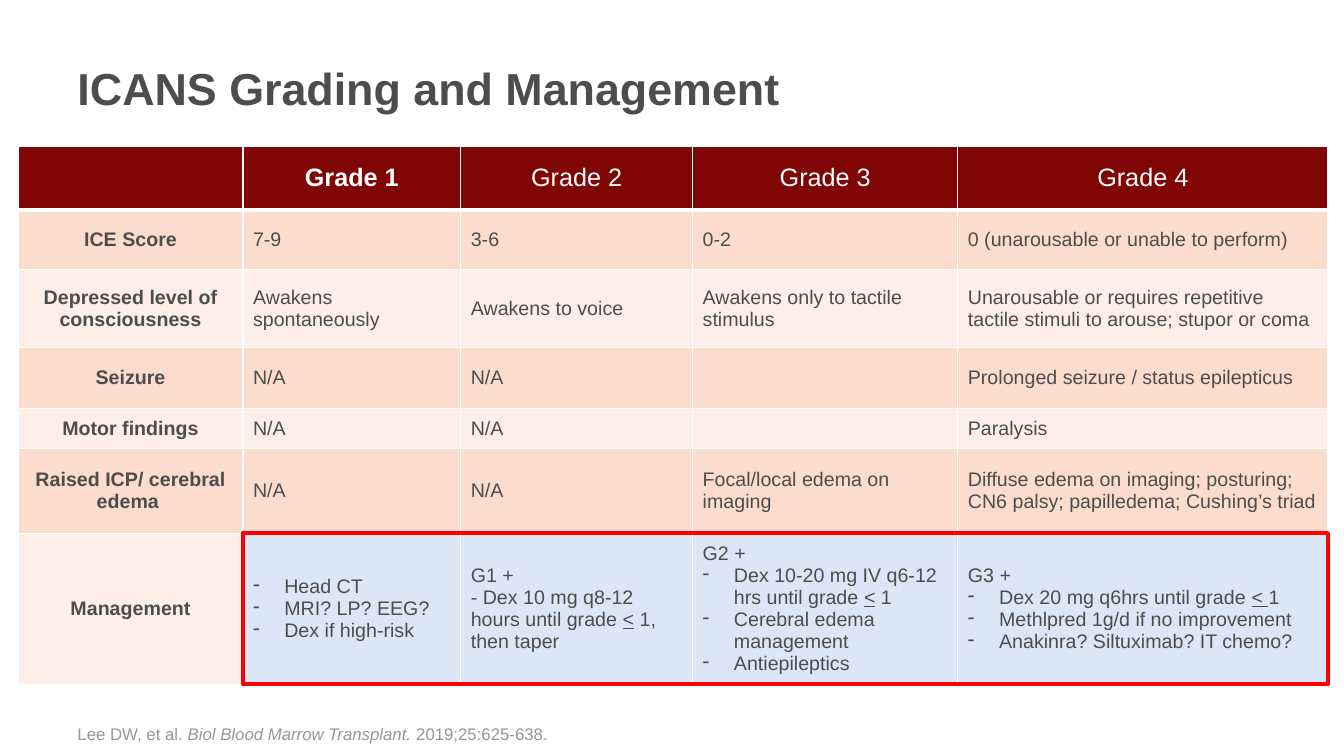
from lxml.etree import SubElement
from pptx import Presentation
from pptx.dml.color import RGBColor
from pptx.enum.shapes import MSO_SHAPE as Shape
from pptx.enum.text import MSO_ANCHOR as Anchor, PP_ALIGN as Align
from pptx.oxml.ns import qn
from pptx.util import Inches, Pt

MAROON = RGBColor(0x80, 0x06, 0x06)
PEACH = RGBColor(0xFC, 0xDC, 0xCD)
PALE_PEACH = RGBColor(0xFD, 0xEE, 0xE8)
PALE_BLUE = RGBColor(0xDB, 0xE7, 0xF7)
WHITE = RGBColor(0xFF, 0xFF, 0xFF)
RED = RGBColor(0xFF, 0x00, 0x00)
DARK_GRAY = RGBColor(0x4D, 0x4D, 0x4D)
LIGHT_GRAY = RGBColor(0x97, 0x97, 0x97)

LEFT, TOP = 0.18, 1.45
COLUMNS = [2.23, 2.16, 2.3, 2.63, 3.67]
ROWS = [0.63, 0.59, 0.78, 0.6, 0.4, 0.84, 1.46]
MARGIN, TEXT_WIDTH = 0.67, 11.75
BULLET, UNDERLINE = "*", "_"

GRADING = [
    ["", "Grade 1", "Grade 2", "Grade 3", "Grade 4"],
    ["ICE Score", "7-9", "3-6", "0-2", "0 (unarousable or unable to perform)"],
    ["Depressed level of consciousness", "Awakens spontaneously", "Awakens to voice",
     "Awakens only to tactile stimulus",
     "Unarousable or requires repetitive tactile stimuli to arouse; stupor or coma"],
    ["Seizure", "N/A", "N/A", "", "Prolonged seizure / status epilepticus"],
    ["Motor findings", "N/A", "N/A", "", "Paralysis"],
    ["Raised ICP/ cerebral edema ", "N/A", "N/A", "Focal/local edema on imaging",
     "Diffuse edema on imaging; posturing; CN6 palsy; papilledema; Cushing’s triad"],
    ["Management",
     "*Head CT\n*MRI? LP? EEG?\n*Dex if high-risk",
     "G1 +\n- Dex 10 mg q8-12 hours until grade _<_ 1, then taper",
     "G2 +\n*Dex 10-20 mg IV q6-12 hrs until grade _<_ 1\n"
     "*Cerebral edema management\n*Antiepileptics",
     "G3 +\n*Dex 20 mg q6hrs until grade _< _1\n"
     "*Methlpred 1g/d if no improvement\n*Anakinra? Siltuximab? IT chemo?"],
]


def style(font, size, color, bold=False):
    font.name = "Arial"
    font.size = Pt(size)
    font.color.rgb = color
    font.bold = bold


def add_border(cell, side, width):
    line = SubElement(cell._tc.get_or_add_tcPr(), qn(f"a:ln{side}"), w=str(Pt(width)))
    fill = SubElement(line, qn("a:solidFill"))
    SubElement(fill, qn("a:srgbClr"), val=str(WHITE))


deck = Presentation()
deck.slide_width, deck.slide_height = Inches(13.33), Inches(7.5)
page = deck.slides.add_slide(deck.slide_layouts[6])

title = page.shapes.add_textbox(Inches(MARGIN), Inches(0.22), Inches(TEXT_WIDTH), Inches(1.3))
title.text_frame.word_wrap = True
title.text_frame.vertical_anchor = Anchor.MIDDLE
title.text_frame.text = "ICANS Grading and Management"
style(title.text_frame.paragraphs[0].runs[0].font, 32, DARK_GRAY, True)

citation = page.shapes.add_textbox(Inches(MARGIN), Inches(6.95), Inches(TEXT_WIDTH), Inches(0.48))
citation.text_frame.word_wrap = True
citation.text_frame.vertical_anchor = Anchor.BOTTOM
for text in ["Lee DW, et al. ", "Biol Blood Marrow Transplant. ", "2019;25:625-638."]:
    span = citation.text_frame.paragraphs[0].add_run()
    span.text = text
    style(span.font, 12, LIGHT_GRAY)
    span.font.italic = text.startswith("Biol")

table = page.shapes.add_table(len(ROWS), len(COLUMNS), Inches(LEFT), Inches(TOP),
                              Inches(sum(COLUMNS)), Inches(sum(ROWS))).table
for column, width in zip(table.columns, COLUMNS):
    column.width = Inches(width)
for row, height in zip(table.rows, ROWS):
    row.height = Inches(height)

for r, entries in enumerate(GRADING):
    for c, entry in enumerate(entries):
        cell = table.cell(r, c)
        header, label = r == 0, c == 0
        for side in "LRTB":
            heavy = header and side == "B" or r == 1 and side == "T"
            add_border(cell, side, 3 if heavy else 1)
        cell.vertical_anchor = Anchor.MIDDLE
        cell.fill.solid()
        if header:
            cell.fill.fore_color.rgb = MAROON
        elif r == len(ROWS) - 1 and not label:
            cell.fill.fore_color.rgb = PALE_BLUE
        else:
            cell.fill.fore_color.rgb = PEACH if r % 2 else PALE_PEACH

        size, color = (18, WHITE) if header else (14, DARK_GRAY)
        bold = c == 1 if header else label
        cell.text_frame.text = entry
        for para in cell.text_frame.paragraphs:
            text = para.text
            para.clear()
            para.alignment = Align.CENTER if header or label else Align.LEFT
            if text.startswith(BULLET):
                properties = para._p.get_or_add_pPr()
                properties.set("marL", str(Inches(0.31)))
                properties.set("indent", str(-Inches(0.31)))
                SubElement(properties, qn("a:buChar"), char="-")
            style(para.font, size, color, bold)
            for part, piece in enumerate(text.removeprefix(BULLET).split(UNDERLINE)):
                if piece:
                    span = para.add_run()
                    span.text = piece
                    style(span.font, size, color, bold)
                    span.font.underline = part % 2 == 1

frame = page.shapes.add_shape(Shape.RECTANGLE, Inches(LEFT + COLUMNS[0]), Inches(TOP + sum(ROWS[:-1])),
                              Inches(sum(COLUMNS[1:])), Inches(1.5))
frame.shadow.inherit = False
frame.fill.background()
frame.line.color.rgb = RED
frame.line.width = Pt(3)

deck.save("out.pptx")
